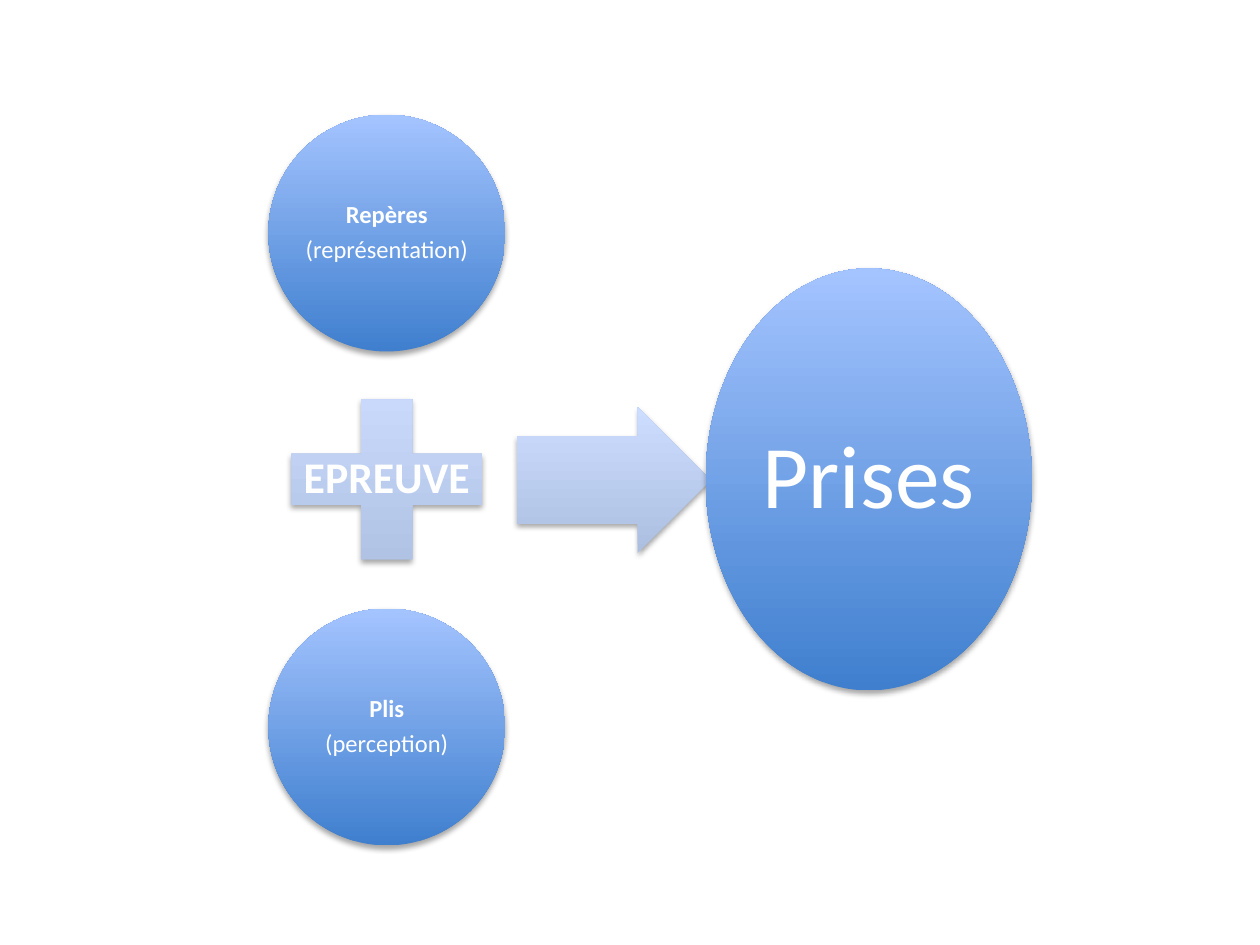
"""Build a slide showing how Repères and Plis, put to the test, lead to Prises."""
from lxml import etree
from pptx import Presentation
from pptx.dml.color import RGBColor
from pptx.enum.shapes import MSO_SHAPE
from pptx.enum.text import MSO_ANCHOR, PP_ALIGN
from pptx.oxml import parse_xml
from pptx.oxml.ns import nsdecls, qn
from pptx.util import Inches, Pt

OVAL, PLUS, ARROW = MSO_SHAPE.OVAL, MSO_SHAPE.MATH_PLUS, MSO_SHAPE.RIGHT_ARROW
MIDDLE, CENTER = MSO_ANCHOR.MIDDLE, PP_ALIGN.CENTER
WHITE = RGBColor(0xFF, 0xFF, 0xFF)
STRONG = (RGBColor(0x3F, 0x7F, 0xCE), RGBColor(0xA4, 0xC4, 0xFF))
PALE = (RGBColor(0xAD, 0xBF, 0xE1), RGBColor(0xCC, 0xDD, 0xFF))
SHADOW = (
    f'<a:outerShdw {nsdecls("a")} blurRad="40000" dist="23000" dir="5400000" '
    'rotWithShape="0"><a:srgbClr val="000000"><a:alpha val="35000"/>'
    '</a:srgbClr></a:outerShdw>'
)

prs = Presentation()
prs.slide_width, prs.slide_height = Inches(10), Inches(7.5)
slide = prs.slides.add_slide(prs.slide_layouts[6])


def add_node(kind, left, top, width, height, colors):
    node = slide.shapes.add_shape(
        kind, Inches(left), Inches(top), Inches(width), Inches(height))
    node.fill.gradient()
    node.fill.gradient_angle = 90
    for stop, color in zip(node.fill.gradient_stops, colors):
        stop.color.rgb = color
    node.line.fill.background()
    effects = etree.SubElement(node.element.spPr, qn("a:effectLst"))
    effects.append(parse_xml(SHADOW))
    return node


def write(node, *lines, size, bold=False, inset=0.0):
    frame = node.text_frame
    frame.word_wrap = True
    frame.vertical_anchor = MIDDLE
    frame.margin_left = frame.margin_right = Inches(inset)
    frame.margin_top = frame.margin_bottom = Inches(inset)
    for index, line in enumerate(lines):
        paragraph = frame.add_paragraph() if index else frame.paragraphs[0]
        paragraph.alignment = CENTER
        paragraph.line_spacing = 0.9
        paragraph.space_after = Pt(round(size * 0.35, 1))
        run = paragraph.add_run()
        run.text = line
        run.font.name = "Calibri"
        run.font.size = Pt(size)
        run.font.bold = bold and index == 0
        run.font.color.rgb = WHITE


sources = [
    (0.91, "Repères", "(représentation)"),
    (4.83, "Plis", "(perception)"),
]
for top, term, gloss in sources:
    source = add_node(OVAL, 2.13, top, 1.88, 1.88, STRONG)
    write(source, term, gloss, size=14, bold=True, inset=0.02)

epreuve = add_node(PLUS, 2.04, 2.94, 2.06, 1.73, PALE)
write(epreuve, "EPREUVE", size=25, bold=True)

outcome_arrow = add_node(ARROW, 4.1, 3.23, 1.54, 1.16, PALE)
outcome_arrow.adjustments[0] = 0.6

prises = add_node(OVAL, 5.6, 2.13, 2.59, 3.35, STRONG)
write(prises, "Prises", size=51, inset=0.07)

prs.save("out.pptx")
